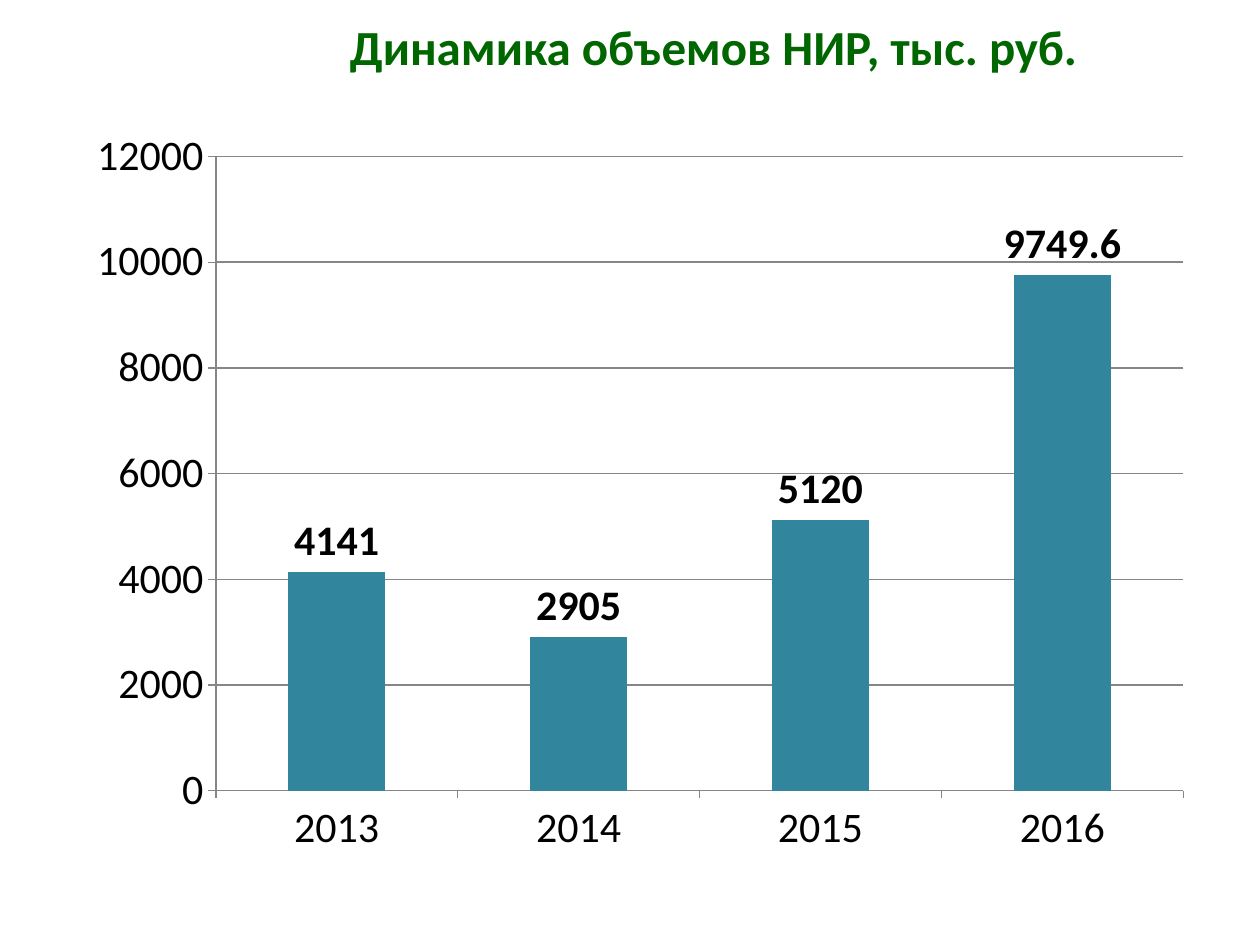
from pptx import Presentation
from pptx.chart.data import CategoryChartData
from pptx.dml.color import RGBColor
from pptx.enum.chart import XL_CHART_TYPE, XL_LABEL_POSITION, XL_TICK_MARK
from pptx.enum.text import MSO_ANCHOR, PP_ALIGN
from pptx.util import Pt

COLUMN = XL_CHART_TYPE.COLUMN_CLUSTERED
ABOVE = XL_LABEL_POSITION.OUTSIDE_END
OUT, NONE = XL_TICK_MARK.OUTSIDE, XL_TICK_MARK.NONE
MIDDLE, CENTER = MSO_ANCHOR.MIDDLE, PP_ALIGN.CENTER

COLORS = {"title": "006600", "text": "000000", "bar": "31859C", "line": "868686"}
VOLUMES = {"2013": 4141, "2014": 2905, "2015": 5120, "2016": 9749.6}


def color(name):
    return RGBColor.from_string(COLORS[name])


def style(font, size, tint="text", bold=False):
    font.name, font.size, font.bold = "Calibri", Pt(size), bold
    font.color.rgb = color(tint)


def write(frame, text, align=CENTER, **look):
    """Put one formatted paragraph into a text frame."""
    frame.word_wrap = True
    frame.vertical_anchor = MIDDLE
    par = frame.paragraphs[0]
    par.alignment = align
    run = par.add_run()
    run.text = text
    style(run.font, **look)


class Page:
    """Holds the text size of the chart and the current slide."""

    def __init__(self, deck, size):
        self.size = size
        self.slide = deck.slides.add_slide(deck.slide_layouts[5])

    def title(self, text, left, top, width, height):
        box = self.slide.shapes.title
        box.left, box.top = Pt(left), Pt(top)
        box.width, box.height = Pt(width), Pt(height)
        write(box.text_frame, text, size=28, tint="title", bold=True)

    def columns(self, name, values, left, top, width, height):
        data = CategoryChartData()
        data.categories = list(values)
        data.add_series(name, values.values())
        chart = self.slide.shapes.add_chart(
            COLUMN, Pt(left), Pt(top), Pt(width), Pt(height), data).chart
        chart.has_title = chart.has_legend = False
        style(chart.font, 10)
        for axis in (chart.category_axis, chart.value_axis):
            self.axis(axis)
        scale = chart.value_axis
        scale.minimum_scale, scale.maximum_scale, scale.major_unit = 0, 12000, 2000
        scale.has_major_gridlines = True
        self.line(scale.major_gridlines)
        self.bars(chart.plots[0])

    def axis(self, axis):
        axis.major_tick_mark, axis.minor_tick_mark = OUT, NONE
        style(axis.tick_labels.font, self.size)
        self.line(axis)

    def line(self, part):
        part.format.line.color.rgb = color("line")
        part.format.line.width = Pt(0.75)

    def bars(self, plot):
        plot.gap_width = 150
        plot.vary_by_categories = False
        fill = plot.series[0].format.fill
        fill.solid()
        fill.fore_color.rgb = color("bar")
        plot.has_data_labels = True
        labels = plot.data_labels
        labels.show_value = True
        labels.position = ABOVE
        style(labels.font, self.size, bold=True)


def main():
    deck = Presentation()
    deck.slide_width, deck.slide_height = Pt(720), Pt(540)
    page = Page(deck, size=24)
    page.title("Динамика объемов НИР, тыс. руб. ", 121.7, -1.4, 578.2, 54.7)
    page.columns("НИР", VOLUMES, 42.5, 66.2, 646.6, 430.6)
    deck.save("out.pptx")


if __name__ == "__main__":
    main()
